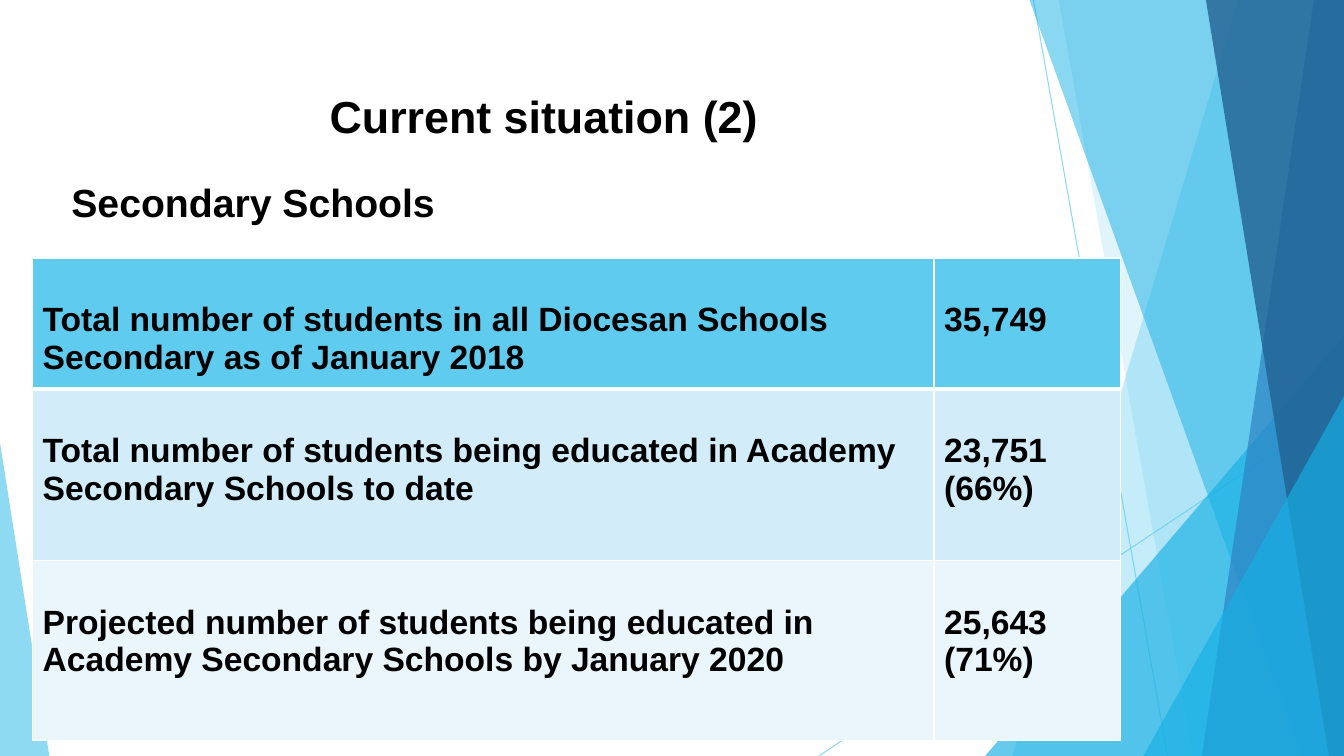
import pptx
import pptx.dml.color
import pptx.enum.shapes
import pptx.enum.text
import pptx.oxml
import pptx.oxml.ns
import pptx.util

COLOURS = {
    "white": "FFFFFF", "black": "000000",
    "sky": "5FCBEF", "cyan": "17B0E4", "blue": "2E83C3", "navy": "226292",
    "band": "D2ECF9", "pale": "EAF6FC",
}
COLUMNS, ROWS = 40, 30


def rgb(name):
    return pptx.dml.color.RGBColor.from_string(COLOURS[name])


def set_alpha(shape, percent):
    for colour in shape._element.spPr.iter(pptx.oxml.ns.qn("a:srgbClr")):
        alpha = colour.makeelement(pptx.oxml.ns.qn("a:alpha"), {"val": str(percent * 1000)})
        colour.append(alpha)


class SlideBuilder:
    """Places elements on a grid of COLUMNS by ROWS."""

    font = "Arial"

    def __init__(self, deck):
        self.column = deck.slide_width / COLUMNS
        self.row = deck.slide_height / ROWS
        self.slide = deck.slides.add_slide(deck.slide_layouts[5])
        self.shapes = self.slide.shapes

    def x(self, columns):
        return round(columns * self.column)

    def y(self, rows):
        return round(rows * self.row)

    def box(self, left, top, width, height):
        return self.x(left), self.y(top), self.x(width), self.y(height)

    def style_text(self, frame, size, align):
        for paragraph in frame.paragraphs:
            paragraph.alignment = align
            paragraph.font.name = self.font
            paragraph.font.size = pptx.util.Pt(size)
            paragraph.font.bold = True
            paragraph.font.color.rgb = rgb("black")

    def fill_frame(self, frame, text, size, align):
        frame.text = text
        frame.word_wrap = True
        frame.auto_size = pptx.enum.text.MSO_AUTO_SIZE.NONE
        frame.vertical_anchor = pptx.enum.text.MSO_ANCHOR.TOP
        self.style_text(frame, size, align)

    def title(self, text, place):
        heading = self.shapes.title
        heading.left, heading.top, heading.width, heading.height = self.box(*place)
        self.fill_frame(heading.text_frame, text, 32, pptx.enum.text.PP_ALIGN.CENTER)

    def subtitle(self, text, place):
        subheading = self.shapes.add_textbox(*self.box(*place))
        self.fill_frame(subheading.text_frame, text, 28, pptx.enum.text.PP_ALIGN.LEFT)

    def ray(self, start, end):
        ray = self.shapes.add_connector(
            pptx.enum.shapes.MSO_CONNECTOR.STRAIGHT,
            self.x(start[0]), self.y(start[1]), self.x(end[0]), self.y(end[1]))
        ray.line.color.rgb = rgb("sky")
        ray.line.width = pptx.util.Pt(0.75)
        set_alpha(ray, 70)
        ray._element.spPr.append(pptx.oxml.parse_xml(
            f'<a:effectLst {pptx.oxml.ns.nsdecls("a")}/>'))

    def paint(self, shape, colour, alpha):
        shape.fill.solid()
        shape.fill.fore_color.rgb = rgb(colour)
        shape.line.fill.background()
        shape.shadow.inherit = False
        set_alpha(shape, alpha)

    def facet(self, top_left, bottom_left, colour, alpha):
        outline = self.shapes.build_freeform(self.x(top_left), 0)
        corners = [(COLUMNS, 0), (COLUMNS, ROWS), (bottom_left, ROWS)]
        outline.add_line_segments([(self.x(c), self.y(r)) for c, r in corners])
        self.paint(outline.convert_to_shape(), colour, alpha)

    def wedge(self, left, top, width, apex, colour, alpha):
        wedge = self.shapes.add_shape(
            pptx.enum.shapes.MSO_SHAPE.ISOSCELES_TRIANGLE,
            *self.box(left, top, width, ROWS - top))
        wedge.adjustments[0] = apex
        self.paint(wedge, colour, alpha)

    def borders(self, cell, widths):
        properties = cell._tc.get_or_add_tcPr()
        for index, (side, points) in enumerate(widths.items()):
            properties.insert(index, pptx.oxml.parse_xml(
                f'<a:ln{side} {pptx.oxml.ns.nsdecls("a")} w="{pptx.util.Pt(points)}">'
                f'<a:solidFill><a:srgbClr val="{COLOURS["white"]}"/></a:solidFill></a:ln{side}>'))

    def table(self, left, top, widths, heights, records, fills):
        table = self.shapes.add_table(
            len(records), len(widths),
            *self.box(left, top, sum(widths), sum(heights))).table
        for column, width in zip(table.columns, widths):
            column.width = self.x(width)
        for r, (record, height, fill) in enumerate(zip(records, heights, fills)):
            table.rows[r].height = self.y(height)
            rule = {"L": 1, "R": 1, "T": 3 if r == 1 else 1, "B": 3 if r == 0 else 1}
            for c, text in enumerate(record):
                cell = table.cell(r, c)
                cell.text = text
                cell.margin_top = pptx.util.Inches(0.43)
                cell.fill.solid()
                cell.fill.fore_color.rgb = rgb(fill)
                self.style_text(cell.text_frame, 24, pptx.enum.text.PP_ALIGN.LEFT)
                self.borders(cell, rule)


def main():
    deck = pptx.Presentation()
    deck.slide_width = pptx.util.Inches(13.33)
    deck.slide_height = pptx.util.Inches(7.5)
    page = SlideBuilder(deck)

    # Faceted backdrop, from back to front
    page.ray((30.76, 0), (34.75, ROWS))
    page.ray((COLUMNS, 16.12), (24.37, ROWS))
    page.facet(36.85, 30.13, "sky", 36)
    page.facet(31.51, 35.5, "sky", 20)
    page.wedge(29.32, 13.32, 10.68, 1, "cyan", 66)
    page.facet(30.64, 38.74, "cyan", 50)
    page.facet(39.1, 35.77, "blue", 70)
    page.facet(35.89, 39.55, "navy", 80)
    page.wedge(34.03, 15.72, 5.97, 1, "cyan", 66)
    page.wedge(0, 17.56, 1.47, 0, "sky", 70)

    # Headings
    page.title("Current situation (2)", (1.83, 3.32, 28.72, 2.6))
    page.subtitle("Secondary Schools", (1.83, 6.88, 28.72, 2.2))

    # Student numbers
    students = [
        ("Total number of students in all Diocesan Schools Secondary as of January 2018",
         "35,749"),
        ("Total number of students being educated in Academy Secondary Schools to date",
         "23,751\n(66%)"),
        ("Projected number of students being educated in Academy Secondary Schools by January 2020",
         "25,643\n(71%)"),
    ]
    page.table(0.97, 10.24, (26.83, 5.55), (5.2, 6.8, 7.16),
               students, ("sky", "band", "pale"))

    deck.save("out.pptx")


if __name__ == "__main__":
    main()
